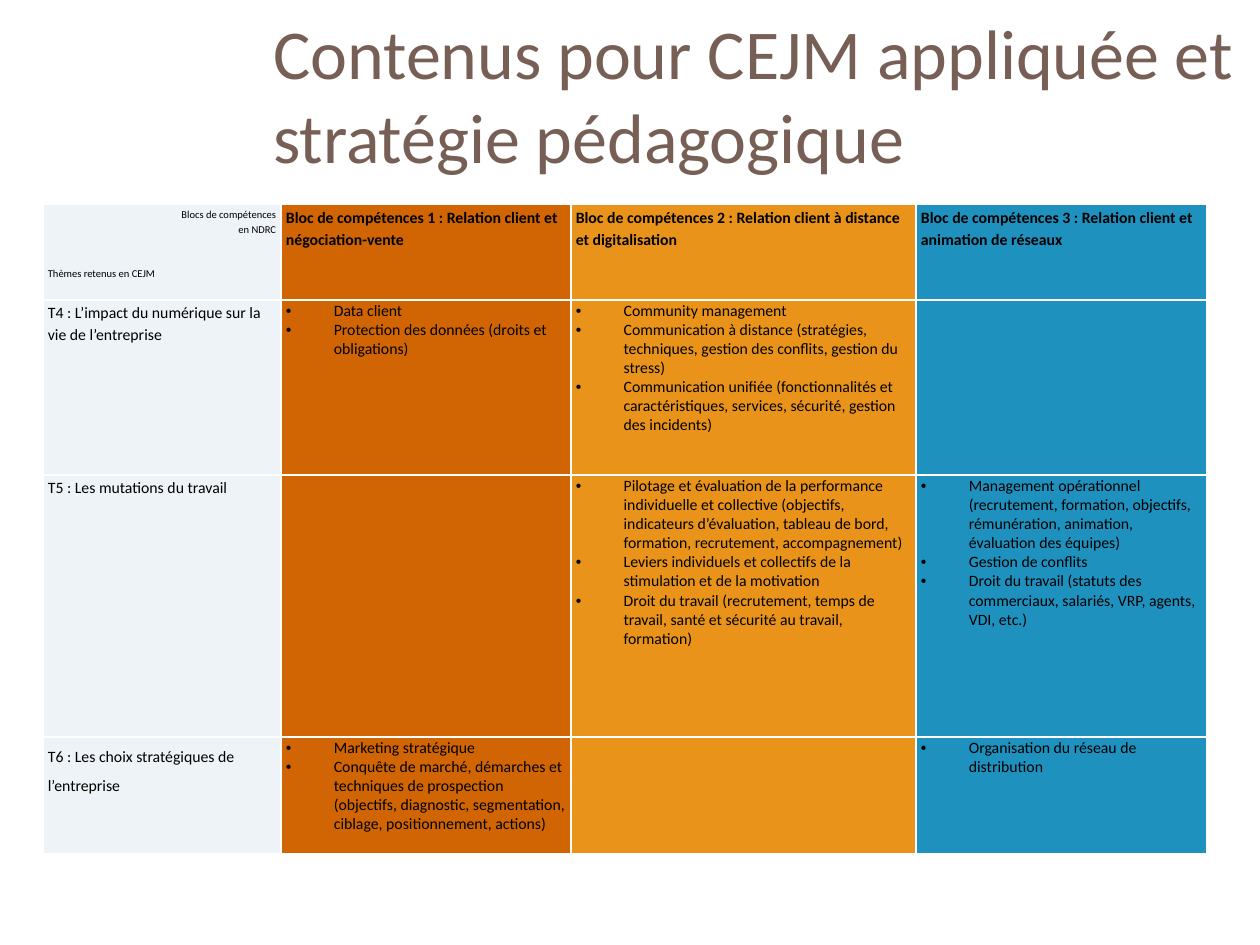
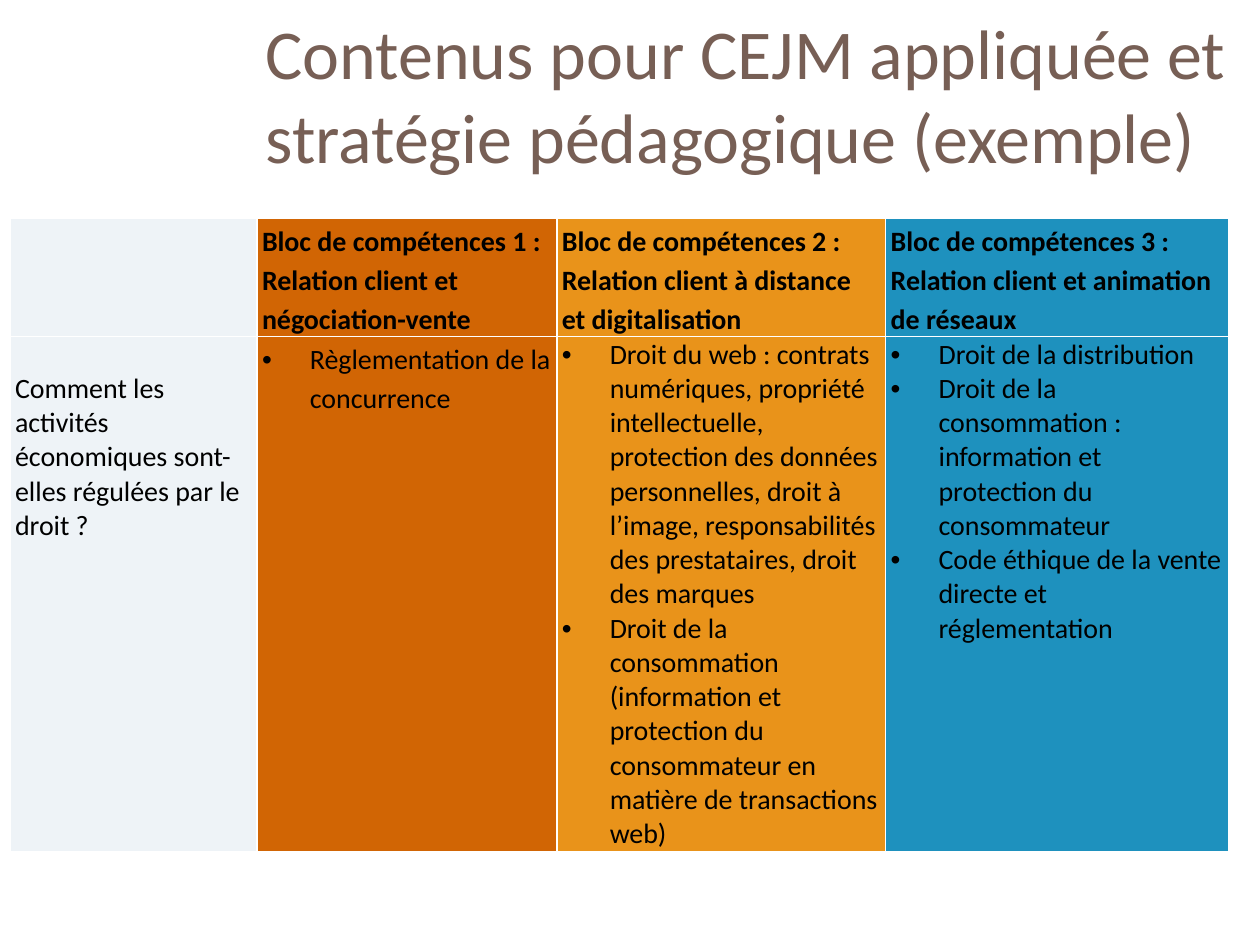
from dataclasses import dataclass

from lxml.etree import SubElement
from pptx import Presentation
from pptx.dml.color import RGBColor
from pptx.enum.text import MSO_ANCHOR as Anchor, PP_ALIGN as Align
from pptx.oxml import parse_xml
from pptx.oxml.ns import nsdecls, qn
from pptx.util import Inches, Length, Pt

FONT = "Calibri"
TITLE_COLOUR = "775F55"
TEXT_COLOUR = "000000"
BORDER_COLOUR = "FFFFFF"
COLUMN_FILLS = ("EEF3F7", "D16504", "E9931A", "1E91BE")
BLOCK_HEADINGS = (
    "Bloc de compétences 1 : Relation client et négociation-vente",
    "Bloc de compétences 2 : Relation client à distance et digitalisation",
    "Bloc de compétences 3 : Relation client et animation de réseaux",
)
LOOSE = 1.15


@dataclass(frozen=True)
class Entry:
    """Content of one table cell."""
    lines: tuple[str, ...] = ()
    bulleted: bool = False
    bold: bool = False
    spacing: float | Length = 1.0
    top_margin: float = 0.01


@dataclass(frozen=True)
class ThemeSlide:
    """Title and grid of themes against competence blocks."""
    title: str
    title_left: float
    title_width: float
    left: float
    top: float
    widths: tuple[float, ...]
    heights: tuple[float, ...]
    size: int
    rows: tuple[tuple[Entry, ...], ...]


def theme(text: str, spacing: float | Length = LOOSE, top_margin: float = 0.01) -> Entry:
    """Return the row label of a theme."""
    return Entry((text,), spacing=spacing, top_margin=top_margin)


def topics(*lines: str, spacing: float = 1.0) -> Entry:
    """Return a bulleted list of topics."""
    return Entry(lines, bulleted=True, spacing=spacing)


EMPTY = Entry()
HEADING_ROW = (EMPTY, *(Entry((text,), bold=True, spacing=LOOSE) for text in BLOCK_HEADINGS))

OVERVIEW = ThemeSlide(
    "Contenus pour CEJM appliquée et stratégie pédagogique", 2.07, 7.93,
    0.34, 1.62, (1.89, 2.3, 2.74, 2.31), (0.76, 1.39, 2.08, 0.93), 9,
    (
        HEADING_ROW,
        (
            theme("T4 : L’impact du numérique sur la vie de l’entreprise"),
            topics("Data client", "Protection des données (droits et obligations)"),
            topics(
                "Community management",
                "Communication à distance (stratégies, techniques, gestion des conflits, "
                "gestion du stress)",
                "Communication unifiée (fonctionnalités et caractéristiques, services, "
                "sécurité, gestion des incidents)",
            ),
            EMPTY,
        ),
        (
            theme("T5 : Les mutations du travail"),
            EMPTY,
            topics(
                "Pilotage et évaluation de la performance individuelle et collective "
                "(objectifs, indicateurs d’évaluation, tableau de bord, formation, "
                "recrutement, accompagnement)",
                "Leviers individuels et collectifs de la stimulation et de la motivation",
                "Droit du travail (recrutement, temps de travail, santé et sécurité au "
                "travail, formation)",
            ),
            topics(
                "Management opérationnel (recrutement, formation, objectifs, rémunération, "
                "animation, évaluation des équipes)",
                "Gestion de conflits",
                "Droit du travail (statuts des commerciaux, salariés, VRP, agents, VDI, etc.)",
            ),
        ),
        (
            theme("T6 : Les choix stratégiques de l’entreprise", spacing=Pt(16.5)),
            topics(
                "Marketing stratégique",
                "Conquête de marché, démarches et techniques de prospection (objectifs, "
                "diagnostic, segmentation, ciblage, positionnement, actions)",
            ),
            EMPTY,
            topics("Organisation du réseau de distribution"),
        ),
    ),
)

EXAMPLE = ThemeSlide(
    "Contenus pour CEJM appliquée et stratégie pédagogique (exemple)", 2.01, 7.89,
    0.08, 1.73, (1.96, 2.38, 2.61, 2.72), (0.94, 4.09), 16,
    (
        HEADING_ROW,
        (
            theme("Comment les activités économiques sont-elles régulées par le droit ?",
                  spacing=1.0, top_margin=0.28),
            topics("Règlementation de la concurrence", spacing=LOOSE),
            topics(
                "Droit du web : contrats numériques, propriété intellectuelle, protection des "
                "données personnelles, droit à l’image, responsabilités des prestataires, "
                "droit des marques",
                "Droit de la consommation (information et protection du consommateur en "
                "matière de transactions web)",
            ),
            topics(
                "Droit de la distribution",
                "Droit de la consommation : information et protection du consommateur",
                "Code éthique de la vente directe et réglementation",
            ),
        ),
    ),
)


def colour(code: str) -> RGBColor:
    """Turn a hex string into a colour."""
    return RGBColor.from_string(code)


def style(paragraph, size: float, code: str = TEXT_COLOUR, bold: bool = False) -> None:
    """Set the font of a paragraph."""
    font = paragraph.font
    font.name, font.size, font.bold = FONT, Pt(size), bold
    font.color.rgb = colour(code)


def add_bullet(paragraph) -> None:
    """Give a paragraph a bullet with a hanging indent."""
    properties = paragraph._p.get_or_add_pPr()
    properties.set("marL", str(Inches(0.38)))
    properties.set("indent", str(-Inches(0.38)))
    SubElement(properties, qn("a:buFont")).set("typeface", "Arial")
    SubElement(properties, qn("a:buChar")).set("char", "•")


def add_borders(cell) -> None:
    """Draw a thin border on the four sides of a cell."""
    properties = cell._tc.get_or_add_tcPr()
    for position, side in enumerate(("lnL", "lnR", "lnT", "lnB")):
        properties.insert(position, parse_xml(
            f'<a:{side} {nsdecls("a")} w="{Pt(1)}"><a:solidFill>'
            f'<a:srgbClr val="{BORDER_COLOUR}"/></a:solidFill></a:{side}>'))


def fill_cell(cell, entry: Entry, fill: str, size: float) -> None:
    """Write an entry into a cell and colour it."""
    cell.margin_left = cell.margin_right = Inches(0.04)
    cell.margin_top, cell.margin_bottom = Inches(entry.top_margin), Inches(0)
    cell.fill.solid()
    cell.fill.fore_color.rgb = colour(fill)
    add_borders(cell)
    frame = cell.text_frame
    for index, line in enumerate(entry.lines):
        paragraph = frame.add_paragraph() if index else frame.paragraphs[0]
        paragraph.text = line
        if entry.bulleted:
            add_bullet(paragraph)
        paragraph.line_spacing = entry.spacing
        style(paragraph, size, bold=entry.bold)


def add_title(slide, content: ThemeSlide) -> None:
    """Add the slide title."""
    box = slide.shapes.add_textbox(Inches(content.title_left), Inches(0.2),
                                   Inches(content.title_width), Inches(1.08))
    frame = box.text_frame
    frame.word_wrap = True
    frame.vertical_anchor = Anchor.MIDDLE
    frame.text = content.title
    style(frame.paragraphs[0], 40, TITLE_COLOUR)


def add_theme_table(slide, content: ThemeSlide):
    """Add the table of themes and return it."""
    table = slide.shapes.add_table(
        len(content.heights), len(content.widths), Inches(content.left), Inches(content.top),
        Inches(sum(content.widths)), Inches(sum(content.heights))).table
    table.first_row = table.horz_banding = False
    for column, width in zip(table.columns, content.widths):
        column.width = Inches(width)
    for row, height, entries in zip(table.rows, content.heights, content.rows):
        row.height = Inches(height)
        for cell, entry, fill in zip(row.cells, entries, COLUMN_FILLS):
            fill_cell(cell, entry, fill, content.size)
    return table


def label_corner(cell) -> None:
    """Name both axes of the table in its corner cell."""
    axes = Entry(("Blocs de compétences", "en NDRC", "Thèmes retenus en CEJM"),
                 spacing=LOOSE, top_margin=0.02)
    fill_cell(cell, axes, COLUMN_FILLS[0], 6)
    *block_lines, theme_line = cell.text_frame.paragraphs
    for line in block_lines:
        line.alignment = Align.RIGHT
    theme_line.space_before = Pt(17)


def add_theme_slide(deck, content: ThemeSlide):
    """Add a slide with title and table, and return the table."""
    slide = deck.slides.add_slide(deck.slide_layouts[6])
    add_title(slide, content)
    return add_theme_table(slide, content)


def main() -> None:
    """Build and save the presentation."""
    deck = Presentation()
    deck.slide_width, deck.slide_height = Inches(10), Inches(7.5)
    overview = add_theme_slide(deck, OVERVIEW)
    label_corner(overview.cell(0, 0))
    add_theme_slide(deck, EXAMPLE)
    deck.save("out.pptx")


if __name__ == "__main__":
    main()
